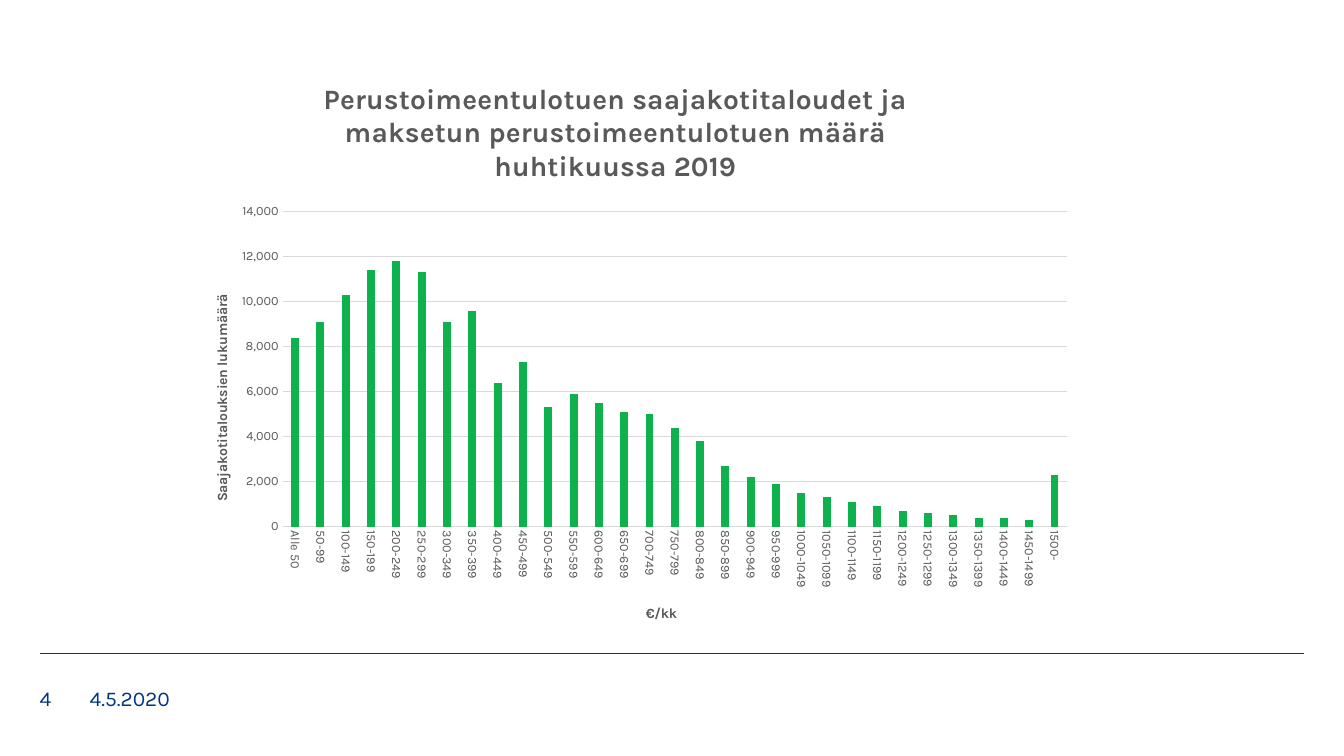
"""Build the slide on households receiving basic social assistance, April 2019."""
from dataclasses import dataclass

from lxml.etree import SubElement
from pptx import Presentation
from pptx.chart.axis import _BaseAxis
from pptx.chart.chart import Chart
from pptx.chart.data import CategoryChartData
from pptx.dml.color import RGBColor
from pptx.enum.chart import XL_CHART_TYPE, XL_TICK_MARK
from pptx.enum.shapes import MSO_CONNECTOR
from pptx.enum.text import MSO_ANCHOR
from pptx.oxml.ns import qn
from pptx.slide import Slide
from pptx.text.text import Font
from pptx.util import Cm, Pt

FONT = "Karla"
COLORS = {
    "navy": "003580",
    "green": "0EB24C",
    "label": "595959",
    "grid": "D9D9D9",
    "black": "000000",
}
BRACKETS = (
    ["Alle 50"]
    + [f"{low}-{low + 49}" for low in range(50, 1500, 50)]
    + ["1500-"]
)
HOUSEHOLDS = [
    8400, 9100, 10300, 11400, 11800, 11300, 9100, 9600, 6400, 7300, 5300,
    5900, 5500, 5100, 5000, 4400, 3800, 2700, 2200, 1900, 1500, 1300, 1100,
    900, 700, 600, 500, 400, 400, 300, 2300,
]


@dataclass(frozen=True)
class FooterItem:
    """Text in the footer with its left edge and width in centimetres."""

    text: str
    left: float
    width: float


@dataclass(frozen=True)
class Heading:
    """Chart or axis title with its place as a fraction of the chart."""

    text: str
    size: int
    x: float
    y: float
    rotation: int = 0


FOOTER = [FooterItem("4.5.2020", 2.26, 3.2), FooterItem("4", 1, 1.2)]
CHART_HEADING = Heading(
    "Perustoimeentulotuen saajakotitaloudet ja maksetun "
    "perustoimeentulotuen määrä huhtikuussa 2019", 20, 0.15, 0.01)
BRACKET_HEADING = Heading("€/kk", 10, 0.51, 0.93)
HOUSEHOLD_HEADING = Heading(
    "Saajakotitalouksien lukumäärä", 10, 0.03, 0.39, -5400000)


def rgb(name: str) -> RGBColor:
    """Return a palette colour."""
    return RGBColor.from_string(COLORS[name])


def style_font(font: Font, size: float, color: str, bold: bool = False) -> None:
    """Set typeface, size, colour and weight."""
    font.name = FONT
    font.size = Pt(size)
    font.bold = bold
    font.color.rgb = rgb(color)


def set_layout(parent, index: int, **settings) -> None:
    """Give a chart part a manual layout at the given child index."""
    for previous in parent.findall(qn("c:layout")):
        parent.remove(previous)
    layout = SubElement(parent, qn("c:layout"))
    parent.insert(index, layout)
    manual = SubElement(layout, qn("c:manualLayout"))
    for tag, value in settings.items():
        SubElement(manual, qn(f"c:{tag}")).set("val", str(value))


def add_heading(title, heading: Heading) -> None:
    """Write, format and place a chart or axis title."""
    frame = title.text_frame
    frame.text = heading.text
    for run in frame.paragraphs[0].runs:
        style_font(run.font, heading.size, "label", bold=True)
    frame._txBody.find(qn("a:bodyPr")).set("rot", str(heading.rotation))
    set_layout(title._element, 1, xMode="edge", yMode="edge",
               x=heading.x, y=heading.y)


def style_axis(axis: _BaseAxis, heading: Heading) -> None:
    """Format what both axes share."""
    axis.major_tick_mark = XL_TICK_MARK.NONE
    axis.minor_tick_mark = XL_TICK_MARK.NONE
    style_font(axis.tick_labels.font, 9, "label")
    add_heading(axis.axis_title, heading)


def style_axes(chart: Chart) -> None:
    """Format the bracket axis and the household axis."""
    brackets = chart.category_axis
    style_axis(brackets, BRACKET_HEADING)
    brackets.has_major_gridlines = False
    brackets.format.line.color.rgb = rgb("grid")
    brackets.format.line.width = Pt(0.75)
    label_body = brackets._element.find(qn("c:txPr")).find(qn("a:bodyPr"))
    label_body.set("rot", "5400000")
    label_body.set("vert", "horz")

    households = chart.value_axis
    style_axis(households, HOUSEHOLD_HEADING)
    households.minimum_scale = 0
    households.maximum_scale = 14000
    households.major_unit = 2000
    households.tick_labels.number_format = "#,##0"
    households.tick_labels.number_format_is_linked = False
    households.format.line.fill.background()
    households.has_major_gridlines = True
    grid = households.major_gridlines.format.line
    grid.color.rgb = rgb("grid")
    grid.width = Pt(0.75)


def add_household_chart(slide: Slide) -> None:
    """Add the column chart of households per bracket."""
    data = CategoryChartData(number_format="#,##0")
    data.categories = BRACKETS
    data.add_series("Series 1", HOUSEHOLDS)
    chart = slide.shapes.add_chart(
        XL_CHART_TYPE.COLUMN_CLUSTERED,
        Cm(4.62), Cm(1.73), Cm(22.73), Cm(14.43), data).chart
    style_font(chart.font, 10, "black")
    chart.has_legend = False
    chart.has_title = True
    add_heading(chart.chart_title, CHART_HEADING)
    style_axes(chart)

    columns = chart.plots[0]
    columns.gap_width = 219
    columns.overlap = -27
    columns.vary_by_categories = False
    fill = columns.series[0].format.fill
    fill.solid()
    fill.fore_color.rgb = rgb("green")
    set_layout(chart._chartSpace.chart.plotArea, 0, layoutTarget="inner",
               xMode="edge", yMode="edge", x=0.11, y=0.25, w=0.87, h=0.55)


def add_footer_rule(slide: Slide) -> None:
    """Draw the line above the footer."""
    rule = slide.shapes.add_connector(
        MSO_CONNECTOR.STRAIGHT, Cm(1), Cm(16.46), Cm(32.87), Cm(16.46))
    rule.line.color.rgb = rgb("navy")
    rule.line.width = Pt(1)
    SubElement(rule._element.spPr, qn("a:effectLst"))


def add_footer_item(slide: Slide, item: FooterItem) -> None:
    """Add one piece of footer text."""
    frame = slide.shapes.add_textbox(
        Cm(item.left), Cm(17.07), Cm(item.width), Cm(1.02)).text_frame
    frame.word_wrap = True
    frame.vertical_anchor = MSO_ANCHOR.MIDDLE
    frame.margin_left = frame.margin_right = 0
    frame.margin_top = frame.margin_bottom = 0
    frame.text = item.text
    style_font(frame.paragraphs[0].runs[0].font, 15, "navy")


def main() -> None:
    """Build and save the presentation."""
    presentation = Presentation()
    presentation.slide_width = Cm(33.87)
    presentation.slide_height = Cm(19.05)
    slide = presentation.slides.add_slide(presentation.slide_layouts[6])
    add_footer_rule(slide)
    for item in FOOTER:
        add_footer_item(slide, item)
    add_household_chart(slide)
    presentation.save("out.pptx")


if __name__ == "__main__":
    main()
